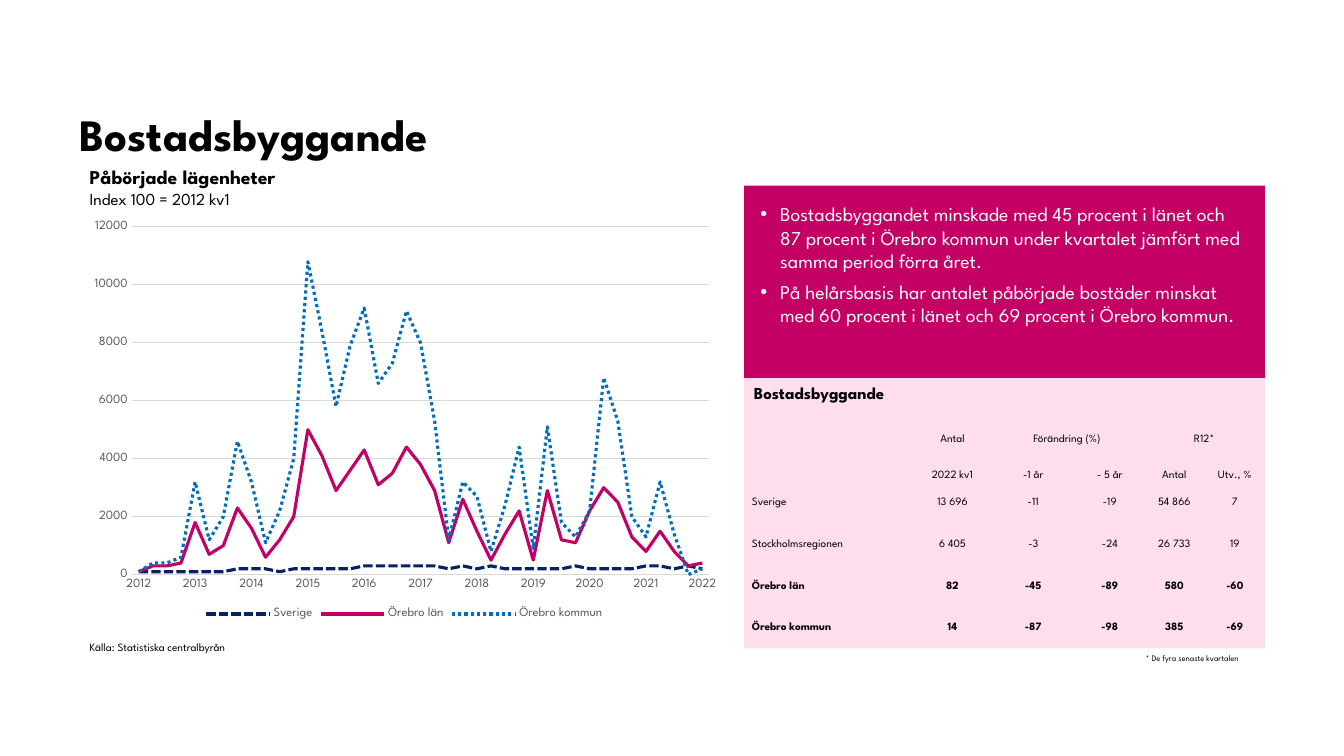
from dataclasses import dataclass

from lxml import etree
from pptx import Presentation
from pptx.chart.data import CategoryChartData
from pptx.dml.color import RGBColor
from pptx.enum.chart import XL_CHART_TYPE, XL_LEGEND_POSITION, XL_MARKER_STYLE, XL_TICK_MARK
from pptx.enum.dml import MSO_LINE
from pptx.enum.shapes import MSO_SHAPE
from pptx.enum.text import MSO_ANCHOR, MSO_AUTO_SIZE, PP_ALIGN
from pptx.oxml.ns import qn
from pptx.util import Cm, Pt


@dataclass(frozen=True)
class Theme:
    font: str = "League Spartan"
    black: str = "000000"
    white: str = "FFFFFF"
    grey: str = "595959"
    rule: str = "D9D9D9"
    navy: str = "052364"
    cerise: str = "C40064"
    blue: str = "006EBF"
    pink: str = "FEDEED"
    title: float = 32
    lead: float = 14
    heading: float = 12
    axis: float = 9
    small: float = 8
    note: float = 6


class SlideBuilder:
    def __init__(self, slide, theme):
        self.slide = slide
        self.theme = theme

    def style(self, font, size, color=None, bold=False):
        font.name = self.theme.font
        font.size = Pt(size)
        font.bold = bold
        font.color.rgb = RGBColor.from_string(color or self.theme.black)

    def style_runs(self, paragraph, size, color=None, bold=False):
        for run in paragraph.runs:
            self.style(run.font, size, color, bold)

    def place(self, shape, box):
        shape.left, shape.top, shape.width, shape.height = map(Cm, box)

    def inset(self, frame, margin):
        frame.margin_left = frame.margin_right = Cm(margin)
        frame.margin_top = frame.margin_bottom = Cm(margin)

    def title(self, text, box):
        heading = self.slide.shapes.title
        self.place(heading, box)
        frame = heading.text_frame
        frame.text = text
        frame.auto_size = MSO_AUTO_SIZE.NONE
        frame.vertical_anchor = MSO_ANCHOR.BOTTOM
        self.inset(frame, 0)
        frame.paragraphs[0].alignment = PP_ALIGN.LEFT
        self.style_runs(frame.paragraphs[0], self.theme.title, bold=True)

    def bullets(self, items, box):
        body = self.slide.placeholders[1]
        self.place(body, box)
        body.fill.solid()
        body.fill.fore_color.rgb = RGBColor.from_string(self.theme.cerise)
        frame = body.text_frame
        frame.text = "\n".join(items)
        frame.auto_size = MSO_AUTO_SIZE.NONE
        self.inset(frame, 0.41)
        for number, paragraph in enumerate(frame.paragraphs):
            paragraph.level = 4
            properties = paragraph._p.get_or_add_pPr()
            properties.set("marL", str(Cm(0.5)))
            properties.set("indent", str(Cm(-0.5)))
            etree.SubElement(properties, qn("a:buFont"), typeface="Arial")
            etree.SubElement(properties, qn("a:buChar"), char="•")
            paragraph.space_before = Pt(5 if number else 0)
            self.style_runs(paragraph, self.theme.lead, self.theme.white)

    def panel(self, box, color):
        background = self.slide.shapes.add_shape(MSO_SHAPE.RECTANGLE, *map(Cm, box))
        background.shadow.inherit = False
        background.fill.solid()
        background.fill.fore_color.rgb = RGBColor.from_string(color)
        background.line.fill.background()

    def label(self, lines, box, wrap=False):
        """Each line is (text, size, bold)."""
        frame = self.slide.shapes.add_textbox(*map(Cm, box)).text_frame
        frame.word_wrap = wrap
        frame.auto_size = MSO_AUTO_SIZE.SHAPE_TO_FIT_TEXT
        frame.text = "\n".join(text for text, _, _ in lines)
        for paragraph, (_, size, bold) in zip(frame.paragraphs, lines):
            self.style_runs(paragraph, size, bold=bold)

    def table(self, rows, box, widths, heights, merged, header_rows, bold_rows):
        frame = self.slide.shapes.add_table(len(rows), len(widths), *map(Cm, box))
        grid = frame.table
        grid.first_row = grid.horz_banding = False
        style_id = grid._tbl.tblPr.find(qn("a:tableStyleId"))
        style_id.text = "{2D5ABB26-0587-4C30-8999-92F81FD0307C}"
        for column, width in zip(grid.columns, widths):
            column.width = Cm(width)
        for row, height in zip(grid.rows, heights):
            row.height = Cm(height)
        for r, row in enumerate(rows):
            for c, text in enumerate(row):
                cell = grid.cell(r, c)
                cell.fill.background()
                self.inset(cell, 0.02)
                if c == 0:
                    cell.margin_left = Cm(0.2)
                header = r < header_rows
                cell.vertical_anchor = MSO_ANCHOR.BOTTOM if header else MSO_ANCHOR.MIDDLE
                if text:
                    paragraph = cell.text_frame.paragraphs[0]
                    paragraph.text = text
                    paragraph.alignment = PP_ALIGN.CENTER if c else PP_ALIGN.LEFT
                    self.style_runs(paragraph, self.theme.small, bold=r in bold_rows)
        for r, first, last in merged:
            grid.cell(r, first).merge(grid.cell(r, last))

    def line_chart(self, categories, series, box, plot_layout):
        """Each series is (name, values, color, dash)."""
        data = CategoryChartData(number_format="General")
        data.categories = categories
        for name, values, _, _ in series:
            data.add_series(name, values)
        chart = self.slide.shapes.add_chart(XL_CHART_TYPE.LINE, *map(Cm, box), data).chart
        self.style(chart.font, 10)
        chart.has_title = False
        chart.has_legend = True
        chart.legend.position = XL_LEGEND_POSITION.BOTTOM
        chart.legend.include_in_layout = False
        self.style(chart.legend.font, self.theme.axis, self.theme.grey)
        chart.plots[0].vary_by_categories = False
        for line, (_, _, color, dash) in zip(chart.plots[0].series, series):
            line.smooth = False
            line.marker.style = XL_MARKER_STYLE.NONE
            line.format.line.width = Pt(2.25)
            line.format.line.color.rgb = RGBColor.from_string(color)
            line.format.line.dash_style = dash
        values_axis, years_axis = chart.value_axis, chart.category_axis
        for axis in (values_axis, years_axis):
            axis.major_tick_mark = axis.minor_tick_mark = XL_TICK_MARK.NONE
            self.style(axis.tick_labels.font, self.theme.axis, self.theme.grey)
        values_axis.minimum_scale = 0
        values_axis.format.line.fill.background()
        for rule in (values_axis.major_gridlines, years_axis):
            rule.format.line.color.rgb = RGBColor.from_string(self.theme.rule)
            rule.format.line.width = Pt(0.75)
        # Fixed inner plot area
        plot_area = chart._chartSpace.chart.plotArea
        for old in plot_area.findall(qn("c:layout")):
            plot_area.remove(old)
        layout = etree.Element(qn("c:layout"))
        plot_area.insert(0, layout)
        manual = etree.SubElement(layout, qn("c:manualLayout"))
        settings = [("layoutTarget", "inner"), ("xMode", "edge"), ("yMode", "edge")]
        for tag, value in settings + list(zip("xywh", plot_layout)):
            etree.SubElement(manual, qn("c:" + tag), val=str(value))


def main():
    theme = Theme()
    deck = Presentation()
    deck.slide_width, deck.slide_height = Cm(33.87), Cm(19.05)
    page = SlideBuilder(deck.slides.add_slide(deck.slide_layouts[1]), theme)

    # Title and key messages
    left, right, right_width = 2.01, 18.75, 13.13
    page.title("Bostadsbyggande", (left, 0.94, 23.42, 3.1))
    page.bullets([
        "Bostadsbyggandet minskade med 45 procent i länet och 87 procent i Örebro kommun "
        "under kvartalet jämfört med samma period förra året.",
        "På helårsbasis har antalet påbörjade bostäder minskat med 60 procent i länet "
        "och 69 procent i Örebro kommun.",
    ], (right, 4.68, right_width, 4.85))

    # Chart of started dwellings
    page.label([("Påbörjade lägenheter", theme.lead, True),
                ("Index 100 = 2012 kv1", theme.heading, False)], (left, 4.04, 6.63, 1.37), wrap=True)
    sweden = [1, 1, 1, 1, 1, 1, 1, 2, 2, 2, 1, 2, 2, 2, 2, 2, 3, 3, 3, 3, 3, 3, 2, 3, 2, 3,
              2, 2, 2, 2, 2, 3, 2, 2, 2, 2, 3, 3, 2, 3, 2]
    county = [1, 3, 3, 4, 18, 7, 10, 23, 16, 6, 12, 20, 50, 41, 29, 36, 43, 31, 35, 44, 38, 29,
              11, 26, 15, 5, 14, 22, 5, 29, 12, 11, 22, 30, 25, 13, 8, 15, 8, 3, 4]
    municipality = [1, 4, 4, 6, 32, 12, 20, 46, 32, 11, 22, 40, 108, 84, 58, 79, 92, 66, 73, 91,
                    80, 53, 12, 32, 27, 8, 24, 44, 9, 51, 18, 13, 22, 68, 53, 20, 13, 32, 14, 0, 2]
    quarters = ["" if q % 4 else str(2012 + q // 4) for q in range(len(sweden))]
    lines = [("Sverige", sweden, theme.navy, MSO_LINE.SQUARE_DOT),
             ("Örebro län", county, theme.cerise, MSO_LINE.SOLID),
             ("Örebro kommun", municipality, theme.blue, MSO_LINE.ROUND_DOT)]
    page.line_chart(quarters, [(name, [100 * v for v in hundreds], color, dash)
                               for name, hundreds, color, dash in lines],
                    (left, 5.41, 16.36, 10.31), (0.08, 0.03, 0.89, 0.85))
    page.label([("Källa: Statistiska centralbyrån", theme.small, False)], (left, 16, 4.6, 0.61))

    # Key figures
    page.panel((right, 9.53, right_width, 6.81), theme.pink)
    page.label([("Bostadsbyggande", theme.heading, True)], (right, 9.53, 4.29, 0.76))
    page.table([
        ["", "Antal", "Förändring (%)", "", "R12*", ""],
        ["", "2022 kv1", "-1 år", "- 5 år", "Antal", "Utv., %"],
        ["Sverige", "13 696", "-11", "-19", "54 866", "7"],
        ["Stockholmsregionen", "6 405", "-3", "-24", "26 733", "19"],
        ["Örebro län", "82", "-45", "-89", "580", "-60"],
        ["Örebro kommun", "14", "-87", "-98", "385", "-69"],
    ], (right, 10.34, right_width, 5.99), [4.3, 1.91, 2.16, 1.7, 1.55, 1.5],
        [0.89, 0.92] + [1.05] * 4, merged=[(0, 2, 3), (0, 4, 5)], header_rows=2, bold_rows=(4, 5))
    page.label([("* De fyra senaste kvartalen", theme.note, False)], (28.63, 16.33, 3.28, 0.51))

    deck.save("out.pptx")


if __name__ == "__main__":
    main()
